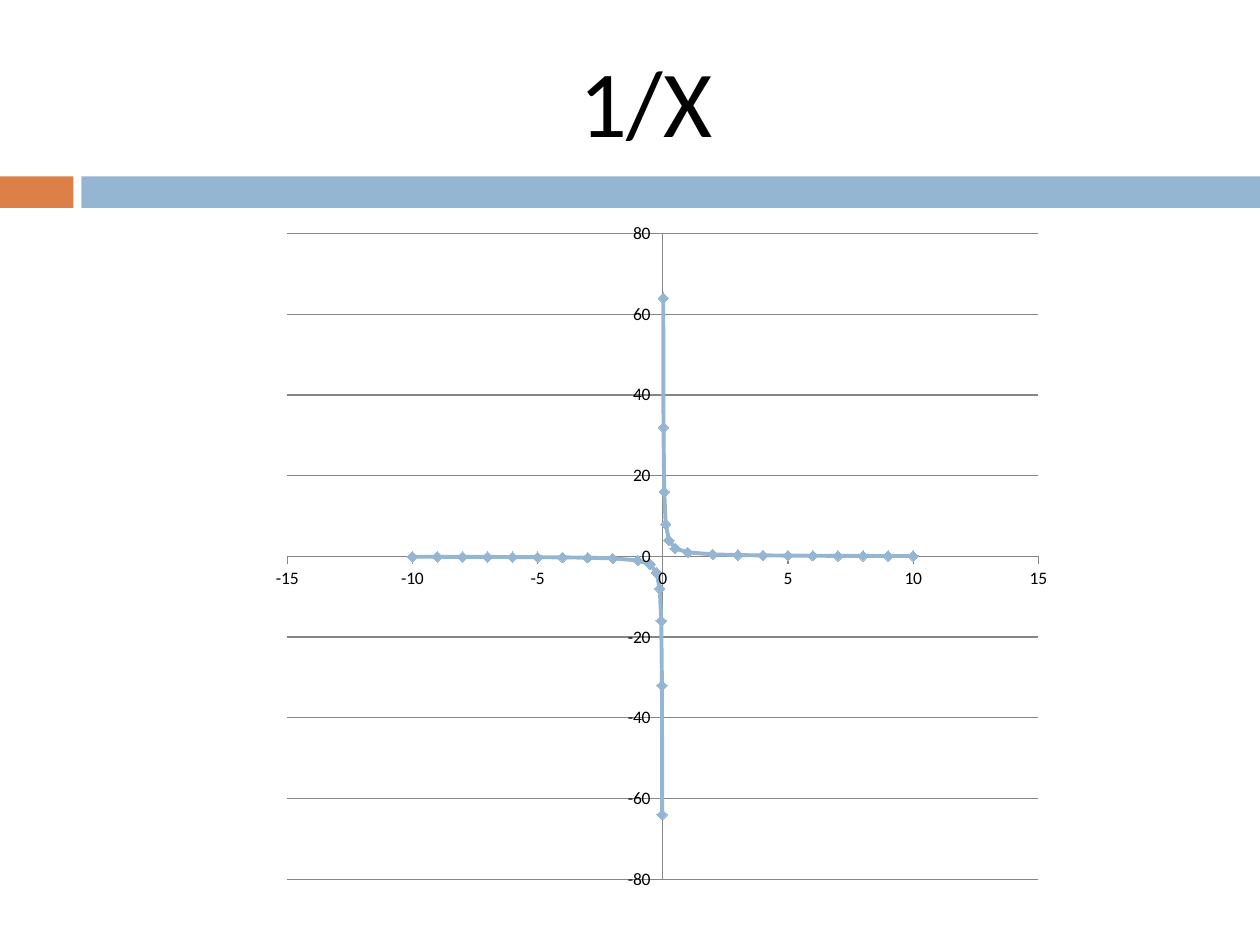
import dataclasses

import pptx
import pptx.chart.data
import pptx.dml.color
import pptx.enum.chart
import pptx.enum.shapes
import pptx.enum.text
import pptx.util

Pt = pptx.util.Pt


@dataclasses.dataclass(frozen=True)
class Theme:
    font: str = "Calibri"
    title_size: int = 54
    label_size: int = 10
    text: str = "000000"
    accent: str = "DD8047"
    main: str = "94B6D2"
    grid: str = "868686"


def rgb(value):
    return pptx.dml.color.RGBColor.from_string(value)


class SlideBuilder:
    """Holds the theme and the current slide."""

    def __init__(self, theme, slide):
        self.theme = theme
        self.slide = slide

    def style_font(self, font, size):
        font.name = self.theme.font
        font.size = Pt(size)
        font.color.rgb = rgb(self.theme.text)

    def title(self, text, left, top, width, height):
        box = self.slide.shapes.title
        box.left, box.top, box.width, box.height = map(Pt, (left, top, width, height))
        frame = box.text_frame
        frame.text = text
        frame.vertical_anchor = pptx.enum.text.MSO_ANCHOR.MIDDLE
        para = frame.paragraphs[0]
        para.alignment = pptx.enum.text.PP_ALIGN.CENTER
        self.style_font(para.runs[0].font, self.theme.title_size)

    def bar(self, color, left, top, width, height):
        box = self.slide.shapes.add_shape(
            pptx.enum.shapes.MSO_SHAPE.RECTANGLE, *map(Pt, (left, top, width, height)))
        box.shadow.inherit = False
        box.fill.solid()
        box.fill.fore_color.rgb = rgb(color)
        box.line.fill.background()

    def style_axis(self, axis, low, high, step, gridlines):
        axis.minimum_scale, axis.maximum_scale, axis.major_unit = low, high, step
        axis.major_tick_mark = pptx.enum.chart.XL_TICK_MARK.OUTSIDE
        axis.minor_tick_mark = pptx.enum.chart.XL_TICK_MARK.NONE
        axis.tick_labels.number_format = "General"
        axis.tick_labels.number_format_is_linked = False
        axis.has_major_gridlines = gridlines
        lines = [axis.format.line]
        if gridlines:
            lines.append(axis.major_gridlines.format.line)
        for line in lines:
            line.color.rgb = rgb(self.theme.grid)
            line.width = Pt(0.75)

    def curve(self, name, points, left, top, width, height):
        data = pptx.chart.data.XyChartData()
        series_data = data.add_series(name)
        for x, y in points:
            series_data.add_data_point(x, y)
        chart = self.slide.shapes.add_chart(
            pptx.enum.chart.XL_CHART_TYPE.XY_SCATTER_SMOOTH,
            *map(Pt, (left, top, width, height)), data).chart
        chart.has_legend = False
        chart.has_title = False
        self.style_font(chart.font, self.theme.label_size)
        chart.plots[0].vary_by_categories = False
        self.style_axis(chart.category_axis, -15, 15, 5, False)
        self.style_axis(chart.value_axis, -80, 80, 20, True)

        series = chart.plots[0].series[0]
        series.smooth = True
        series.format.line.color.rgb = rgb(self.theme.main)
        series.format.line.width = Pt(2.25)
        marker = series.marker
        marker.style = pptx.enum.chart.XL_MARKER_STYLE.DIAMOND
        marker.size = 6
        marker.format.fill.solid()
        marker.format.fill.fore_color.rgb = rgb(self.theme.main)
        marker.format.line.color.rgb = rgb(self.theme.main)


def reciprocal_points():
    """Points of y = 1/x, with a gap at zero."""
    halvings = [1 / 2 ** power for power in range(6, 0, -1)]
    positive = [(round(x, 2), round(1 / x, 2)) for x in halvings + list(range(1, 11))]
    negative = [(-x, -y) for x, y in reversed(positive)]
    return negative + [(0, None)] + positive


def main():
    deck = pptx.Presentation()
    deck.slide_width, deck.slide_height = Pt(720), Pt(540)
    page = deck.slides.add_slide(deck.slide_layouts[5])
    theme = Theme()
    builder = SlideBuilder(theme, page)

    # Divider bars
    builder.bar(theme.accent, 0, 100.8, 42, 18)
    builder.bar(theme.main, 46.5, 100.8, 673.5, 18)

    # Title
    builder.title("1/X", 48, 18, 642, 78)

    # Curve of the function
    builder.curve("Series 1", reciprocal_points(), 148.5, 120, 459, 396)

    deck.save("out.pptx")


if __name__ == "__main__":
    main()
